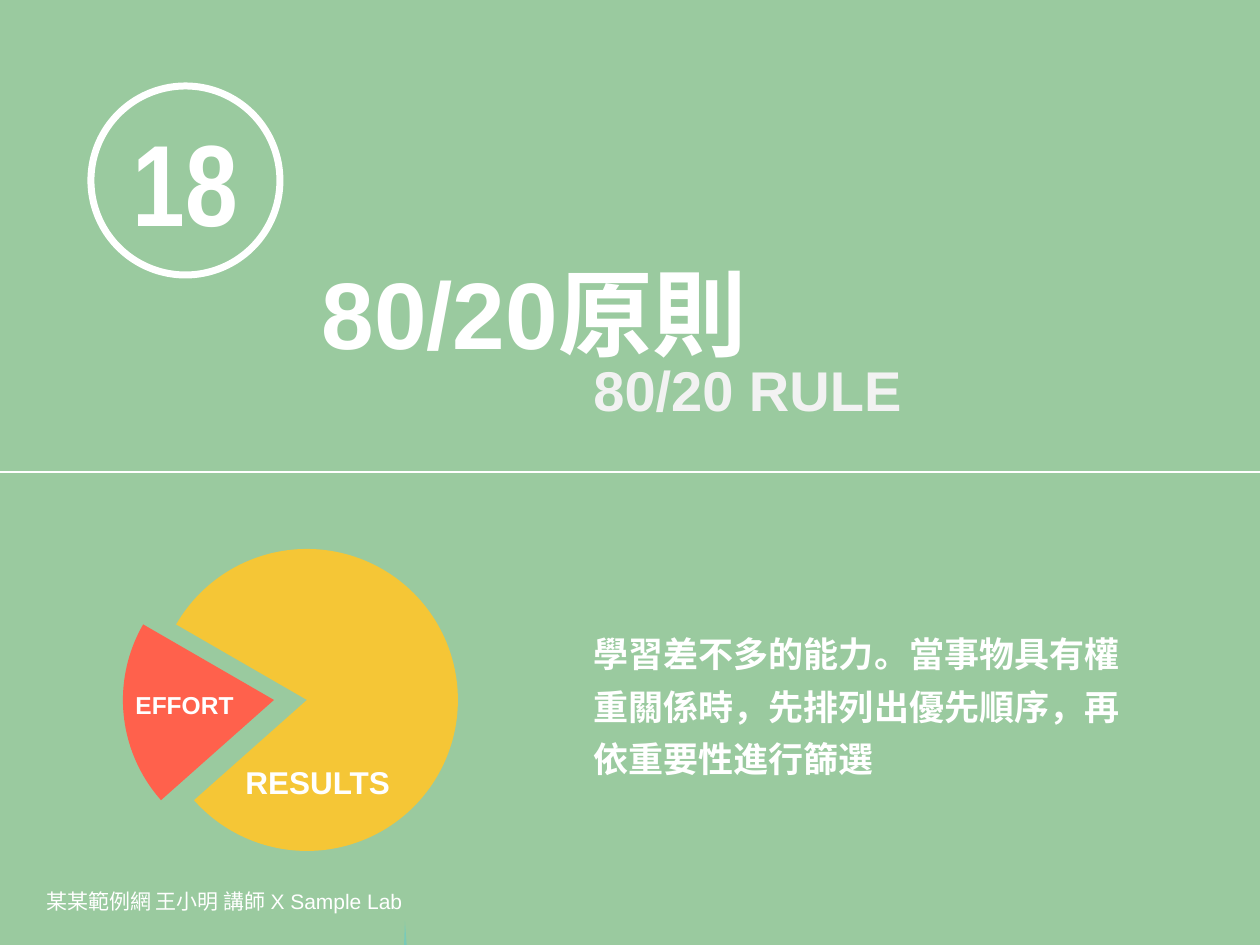
from dataclasses import dataclass

from lxml.etree import SubElement
from pptx import Presentation
from pptx.dml.color import RGBColor
from pptx.enum.shapes import MSO_CONNECTOR, MSO_SHAPE
from pptx.enum.text import MSO_ANCHOR, MSO_AUTO_SIZE, PP_ALIGN
from pptx.oxml.ns import qn
from pptx.util import Emu, Pt

PIXELS_PER_INCH = 126
COLORS = {
    "background": "9ACA9F",
    "white": "FFFFFF",
    "subtitle": "F2F2F2",
    "results": "F5C636",
    "effort": "FF614C",
    "sliver": "6BCBC5",
}


@dataclass(frozen=True)
class Label:
    text: str
    left: int
    top: int
    width: int
    height: int
    size: int
    color: str = "white"
    bold: bool = True
    anchor: MSO_ANCHOR = MSO_ANCHOR.TOP


@dataclass(frozen=True)
class Slice:
    center_x: int
    center_y: int
    radius: int
    start_degrees: float
    end_degrees: float
    color: str


TITLE = Label("80/20原則", 309, 249, 878, 127, 54)
BODY = Label(
    "學習差不多的能力。當事物具有權重關係時，先排列出優先順序，再依重要性進行篩選",
    581, 616, 571, 171, 20,
)
LABELS = [
    Label("某某範例網 王小明 講師 X Sample Lab", 34, 876, 596, 50, 12,
          bold=False, anchor=MSO_ANCHOR.MIDDLE),
    Label("80/20 RULE", 581, 349, 422, 81, 32, "subtitle"),
    Label("EFFORT", 123, 684, 131, 43, 14),
    Label("RESULTS", 233, 757, 199, 50, 18),
]
SLICES = [
    Slice(307, 700, 151, 210, 138.4, "results"),
    Slice(274, 700, 151, 138.4, 210, "effort"),
]
SLIVER_POINTS = [(405, 921), (407, 948), (405, 975), (404, 948)]


def px(value: int) -> Emu:
    return Emu(round(value * 914400 / PIXELS_PER_INCH))


def rgb(name: str) -> RGBColor:
    return RGBColor.from_string(COLORS[name])


def format_text(shape, label: Label, font_name: str = "Arial"):
    frame = shape.text_frame
    frame.text = label.text
    frame.word_wrap = True
    frame.auto_size = MSO_AUTO_SIZE.NONE
    frame.vertical_anchor = label.anchor
    paragraph = frame.paragraphs[0]
    paragraph.alignment = PP_ALIGN.LEFT
    paragraph.font.name = font_name
    paragraph.font.size = Pt(label.size)
    paragraph.font.bold = label.bold
    paragraph.font.color.rgb = rgb(label.color)
    return paragraph


def place(shape, label: Label) -> None:
    shape.left, shape.top = px(label.left), px(label.top)
    shape.width, shape.height = px(label.width), px(label.height)


def fill_plain(shape, color: str) -> None:
    shape.shadow.inherit = False
    shape.fill.solid()
    shape.fill.fore_color.rgb = rgb(color)
    shape.line.fill.background()


def draw_label(slide, label: Label) -> None:
    box = slide.shapes.add_textbox(
        px(label.left), px(label.top), px(label.width), px(label.height))
    format_text(box, label)


def draw_slice(slide, piece: Slice) -> None:
    diameter = px(2 * piece.radius)
    shape = slide.shapes.add_shape(
        MSO_SHAPE.PIE, px(piece.center_x - piece.radius),
        px(piece.center_y - piece.radius), diameter, diameter)
    shape.adjustments[0] = piece.start_degrees * 0.6
    shape.adjustments[1] = piece.end_degrees * 0.6
    fill_plain(shape, piece.color)


def draw_number(slide) -> None:
    label = Label("18", 91, 86, 189, 189, 66, anchor=MSO_ANCHOR.MIDDLE)
    circle = slide.shapes.add_shape(
        MSO_SHAPE.OVAL, px(label.left), px(label.top), px(label.width), px(label.height))
    fill_plain(circle, "white")
    circle.fill.background()
    circle.line.color.rgb = rgb("white")
    circle.line.width = Pt(4)
    paragraph = format_text(circle, label, "Arial Narrow")
    paragraph.alignment = PP_ALIGN.CENTER
    circle.text_frame.word_wrap = False


def draw_divider(slide, width: Emu) -> None:
    middle = px(472)
    divider = slide.shapes.add_connector(MSO_CONNECTOR.STRAIGHT, 0, middle, width, middle)
    divider.line.color.rgb = rgb("white")
    divider.line.width = Pt(1)
    SubElement(divider.element.spPr, qn("a:effectLst"))


def draw_sliver(slide) -> None:
    points = [(px(x), px(y)) for x, y in SLIVER_POINTS]
    builder = slide.shapes.build_freeform(*points[0])
    builder.add_line_segments(points[1:], close=True)
    sliver = builder.convert_to_shape()
    fill_plain(sliver, "sliver")
    color = sliver.element.spPr.find(qn("a:solidFill"))[0]
    SubElement(color, qn("a:alpha"), val="69000")


def fill_placeholders(slide) -> None:
    title, body = slide.shapes.title, slide.placeholders[1]
    place(title, TITLE)
    format_text(title, TITLE)
    place(body, BODY)
    paragraph = format_text(body, BODY)
    paragraph.line_spacing = Pt(30)
    paragraph.space_before = Pt(0)
    properties = paragraph._p.get_or_add_pPr()
    properties.set("marL", "0")
    properties.set("indent", "0")
    bullet = SubElement(properties, qn("a:buNone"))
    properties.find(qn("a:defRPr")).addprevious(bullet)


def main() -> None:
    presentation = Presentation()
    presentation.slide_width = px(1260)
    presentation.slide_height = px(945)
    slide = presentation.slides.add_slide(presentation.slide_layouts[1])
    slide.background.fill.solid()
    slide.background.fill.fore_color.rgb = rgb("background")
    fill_placeholders(slide)
    for piece in SLICES:
        draw_slice(slide, piece)
    draw_number(slide)
    draw_sliver(slide)
    draw_divider(slide, presentation.slide_width)
    for label in LABELS:
        draw_label(slide, label)
    presentation.save("out.pptx")


if __name__ == "__main__":
    main()
